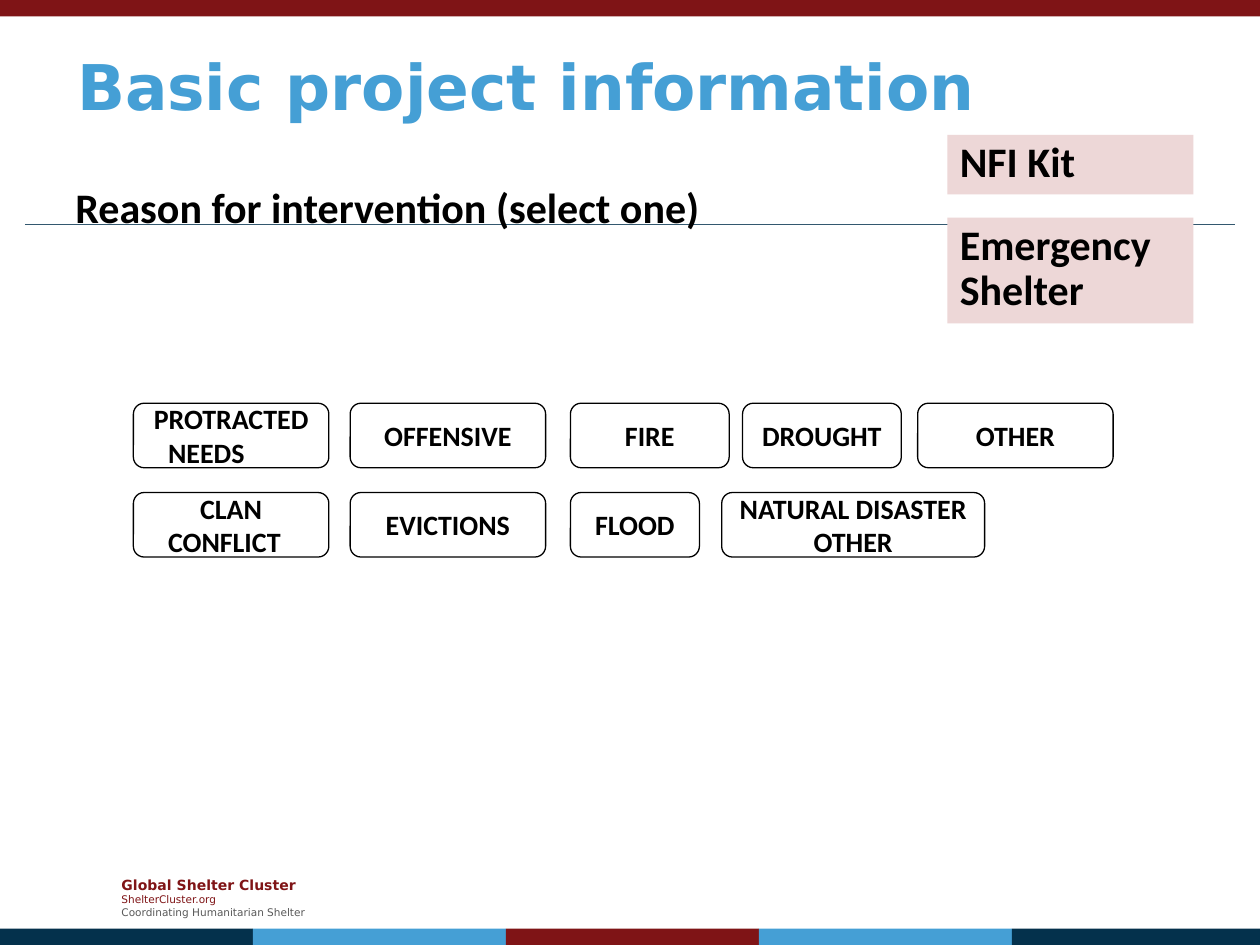
from dataclasses import dataclass

from lxml.etree import SubElement
from pptx import Presentation
from pptx.dml.color import RGBColor
from pptx.enum.shapes import MSO_CONNECTOR, MSO_SHAPE as Shape
from pptx.enum.text import MSO_ANCHOR as Anchor, PP_ALIGN as Align
from pptx.oxml.ns import qn
from pptx.util import Cm, Pt


@dataclass(frozen=True)
class Theme:
    heading_font: str = "DejaVu Sans"
    body_font: str = "Calibri"
    red: str = "7F1416"
    navy: str = "04314C"
    blue: str = "459FD5"
    rule: str = "33586F"
    pink: str = "EDD7D7"
    grey: str = "595959"
    black: str = "000000"
    title_size: int = 36
    body_size: int = 24
    option_size: int = 16
    brand_size: int = 8
    small_size: int = 6
    line_width: float = 0.75


class SlideBuilder:
    def __init__(self, slide, theme):
        self.slide = slide
        self.theme = theme

    def style(self, paragraph, size, color, font, bold=True, align=Align.LEFT):
        paragraph.alignment = align
        for run in paragraph.runs:
            run.font.size = Pt(size)
            run.font.name = font
            run.font.bold = bold
            run.font.color.rgb = RGBColor.from_string(color)

    def title(self, text, left, top, width, height):
        title = self.slide.shapes.title
        title.left, title.top, title.width, title.height = map(Cm, (left, top, width, height))
        title.text_frame.text = text
        title.text_frame.vertical_anchor = Anchor.MIDDLE
        self.style(title.text_frame.paragraphs[0], self.theme.title_size,
                   self.theme.blue, self.theme.heading_font)

    def text(self, lines, left, top, width, height, anchor=Anchor.TOP):
        """Each line is (text, size, color, font, bold)."""
        frame = self.slide.shapes.add_textbox(*map(Cm, (left, top, width, height))).text_frame
        frame.word_wrap = True
        frame.vertical_anchor = anchor
        frame.text = "\n".join(line[0] for line in lines)
        for paragraph, (_, *look) in zip(frame.paragraphs, lines):
            self.style(paragraph, *look)

    def block(self, kind, left, top, width, height, fill=None):
        block = self.slide.shapes.add_shape(kind, *map(Cm, (left, top, width, height)))
        block.shadow.inherit = False
        block.line.fill.background()
        if fill:
            block.fill.solid()
            block.fill.fore_color.rgb = RGBColor.from_string(fill)
        else:
            block.fill.background()
        return block

    def option(self, label, left, top, width, height):
        option = self.block(Shape.ROUNDED_RECTANGLE, left, top, width, height)
        option.line.color.rgb = RGBColor.from_string(self.theme.black)
        option.line.width = Pt(self.theme.line_width)
        option.text_frame.text = label
        option.text_frame.word_wrap = True
        option.text_frame.vertical_anchor = Anchor.MIDDLE
        self.style(option.text_frame.paragraphs[0], self.theme.option_size,
                   self.theme.black, self.theme.body_font, align=Align.CENTER)

    def tag(self, label, left, top, width, height):
        tag = self.block(Shape.RECTANGLE, left, top, width, height, self.theme.pink)
        tag.text_frame.text = label
        tag.text_frame.word_wrap = True
        tag.text_frame.vertical_anchor = Anchor.TOP
        paragraph = tag.text_frame.paragraphs[0]
        paragraph.line_spacing = 0.9
        self.style(paragraph, self.theme.body_size, self.theme.black, self.theme.body_font)

    def rule(self, left, right, y):
        rule = self.slide.shapes.add_connector(
            MSO_CONNECTOR.STRAIGHT, Cm(left), Cm(y), Cm(right), Cm(y))
        rule.line.color.rgb = RGBColor.from_string(self.theme.rule)
        rule.line.width = Pt(self.theme.line_width)
        SubElement(rule._element.spPr, qn("a:effectLst"))


SLIDE_WIDTH, SLIDE_HEIGHT = 25.4, 19.05
BAND_HEIGHT, BAND_STEP = 0.33, 5.1
OPTION_HEIGHT = 1.3

# Rows of options: top, then (label, left, width)
OPTION_ROWS = [
    (8.13, [("PROTRACTED NEEDS\t", 2.69, 3.94), ("OFFENSIVE", 7.06, 3.94),
            ("FIRE", 11.5, 3.2), ("DROUGHT", 14.97, 3.2), ("OTHER", 18.5, 3.94)]),
    (9.93, [("CLAN CONFLICT\t", 2.69, 3.94), ("EVICTIONS", 7.06, 3.94),
            ("FLOOD", 11.5, 2.6), ("NATURAL DISASTER OTHER", 14.55, 5.3)]),
]


def main():
    theme = Theme()
    deck = Presentation()
    deck.slide_width, deck.slide_height = Cm(SLIDE_WIDTH), Cm(SLIDE_HEIGHT)
    page = SlideBuilder(deck.slides.add_slide(deck.slide_layouts[5]), theme)

    # Top and bottom bands
    page.block(Shape.RECTANGLE, 0, 0, SLIDE_WIDTH, BAND_HEIGHT, theme.red)
    band_colors = [theme.navy, theme.blue, theme.red, theme.blue, theme.navy]
    for index, color in enumerate(band_colors):
        left = index * BAND_STEP
        page.block(Shape.RECTANGLE, left, SLIDE_HEIGHT - BAND_HEIGHT,
                   min(BAND_STEP, SLIDE_WIDTH - left), BAND_HEIGHT, color)

    # Footer
    page.text([
        ("Global Shelter Cluster", theme.brand_size, theme.red, theme.heading_font, True),
        ("ShelterCluster.org", theme.small_size, theme.red, theme.heading_font, False),
        ("Coordinating Humanitarian Shelter", theme.small_size, theme.grey,
         theme.heading_font, False),
    ], 2.2, 17.53, 4.4, 1.12, Anchor.MIDDLE)

    # Heading and question
    page.rule(0.5, 24.9, 4.52)
    page.title("Basic project information", 1.3, 0.53, 22.86, 2.39)
    page.text([("Reason for intervention (select one)", theme.body_size, theme.black,
                theme.body_font, True)], 1.27, 3.53, 14.43, 1.6)

    # Options
    for top, options in OPTION_ROWS:
        for label, left, width in options:
            page.option(label, left, top, width, OPTION_HEIGHT)

    # Kit tags
    page.tag("NFI Kit", 19.1, 2.72, 4.96, 1.2)
    page.tag("Emergency Shelter", 19.1, 4.39, 4.96, 2.13)

    deck.save("out.pptx")


if __name__ == "__main__":
    main()
